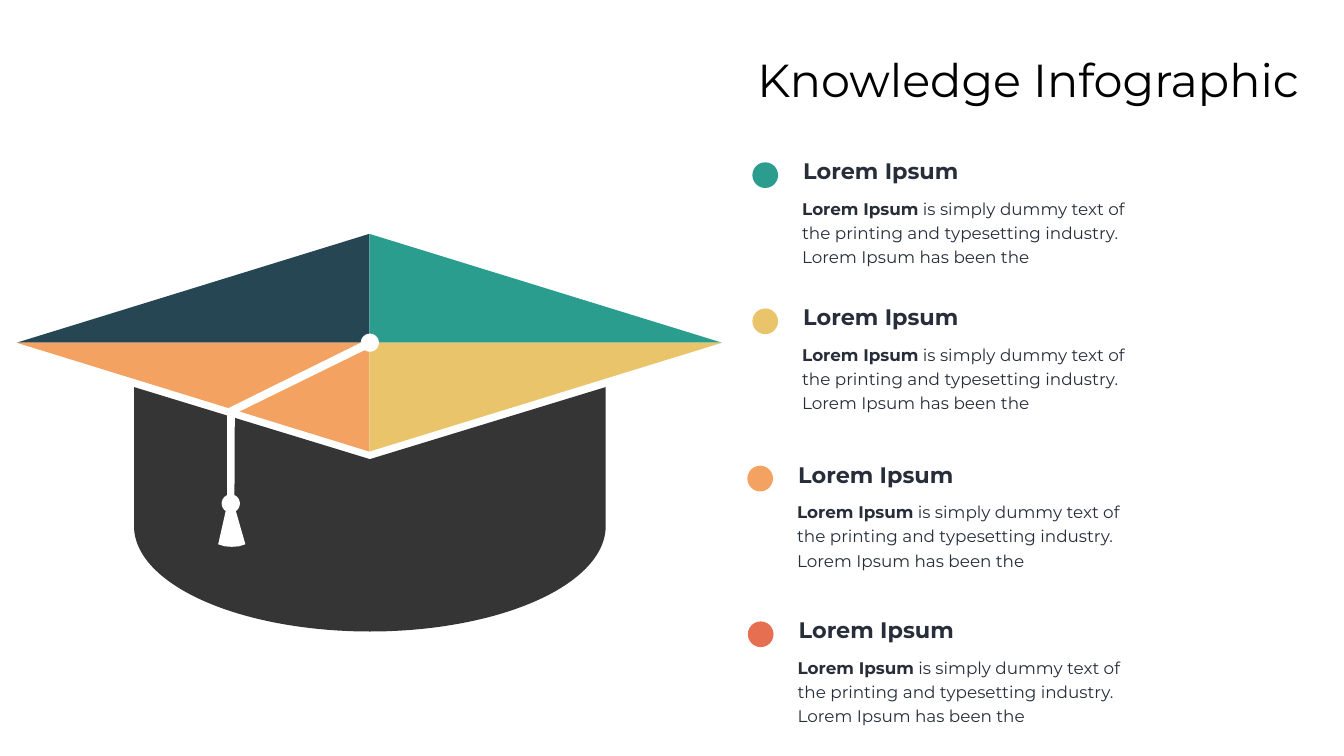
"""Build the Knowledge Infographic slide with a graduation cap and four notes."""
from math import cos, radians, sin
from typing import NamedTuple

from pptx import Presentation
from pptx.dml.color import RGBColor
from pptx.enum.shapes import MSO_SHAPE as Shape
from pptx.enum.text import MSO_ANCHOR as Anchor, MSO_AUTO_SIZE as Fit, PP_ALIGN as Align
from pptx.util import Inches, Pt

FONT = "Montserrat"
COLORS = {
    "navy": "264653", "teal": "2A9D8F", "gold": "E9C46A", "orange": "F4A261",
    "coral": "E76F51", "dark": "353535", "white": "FFFFFF", "ink": "272E3A",
    "black": "000000",
}
HEAD = "Lorem Ipsum"
BODY = " is simply dummy text of the printing and typesetting industry. Lorem Ipsum has been the"
Point = tuple[float, float]


class Note(NamedTuple):
    """A bulleted note, placed by the corner of its dot."""
    color: str
    left: float
    top: float


class Facet(NamedTuple):
    """A triangle of the cap's board, pointing to one side and up or down."""
    color: str
    side: int
    rise: int


NOTES = [
    Note("teal", 14.93, 3.22), Note("gold", 14.93, 6.12),
    Note("orange", 14.83, 9.24), Note("coral", 14.84, 12.33),
]
FACETS = [
    Facet("navy", -1, -1), Facet("orange", -1, 1),
    Facet("teal", 1, -1), Facet("gold", 1, 1),
]
MID_X, MID_Y = 7.33, 6.8
HALF_W, HALF_H = 7, 2.16


def rgb(name: str) -> RGBColor:
    """Look up a colour."""
    return RGBColor.from_string(COLORS[name])


def paint(shape, color: str) -> None:
    """Fill a shape plainly, without line or shadow."""
    shape.fill.solid()
    shape.fill.fore_color.rgb = rgb(color)
    shape.line.fill.background()
    shape.shadow.inherit = False


def arc(mid: Point, radii: Point, start: int, end: int, steps: int = 24) -> list[Point]:
    """Return points along an ellipse, with angles in degrees."""
    turns = [radians(start + (end - start) * i / steps) for i in range(steps + 1)]
    return [(mid[0] + radii[0] * cos(t), mid[1] + radii[1] * sin(t)) for t in turns]


def draw(slide, points: list[Point], color: str) -> None:
    """Draw a closed outline."""
    spots = [(Inches(x), Inches(y)) for x, y in points]
    pen = slide.shapes.build_freeform(*spots[0], scale=1.0)
    pen.add_line_segments(spots[1:], close=True)
    paint(pen.convert_to_shape(), color)


def draw_cap(slide) -> None:
    """Draw the cap, its four facets and the tassel."""
    bowl = arc((7.34, 10.44), (4.68, 2.09), 180, 0, 90)
    draw(slide, [(7.34, 9.11), (2.66, 7.68), *bowl, (12.02, 7.68)], "dark")
    for color, side, rise in FACETS:
        tips = [(MID_X, MID_Y), (MID_X + side * HALF_W, MID_Y), (MID_X, MID_Y + rise * HALF_H)]
        draw(slide, tips, color)
    knot, button, size = (4.58, 9.99), (7.34, MID_Y), (0.18, 0.18)
    tassel = [
        (4.55, 8.09), (4.52, 8.11), (4.51, 8.16), *arc(knot, size, 246, 124),
        (4.33, 10.8), (4.46, 10.84), (4.6, 10.85), (4.74, 10.84), (4.87, 10.8),
        *arc(knot, size, 56, -66), (4.66, 8.21), *arc(button, size, 125, -180),
    ]
    draw(slide, tassel, "white")


def add_text(slide, left: float, top: float, width: float, height: float, size: int):
    """Add a text box and return its paragraph."""
    frame = slide.shapes.add_textbox(*map(Inches, (left, top, width, height))).text_frame
    frame.word_wrap = True
    frame.auto_size = Fit.SHAPE_TO_FIT_TEXT
    para = frame.paragraphs[0]
    para.font.name, para.font.size = FONT, Pt(size)
    para.font.color.rgb = rgb("ink")
    return para


def add_note(slide, note: Note) -> None:
    """Draw a dot with its heading and text."""
    spot = map(Inches, (note.left, note.top, 0.51, 0.51))
    paint(slide.shapes.add_shape(Shape.OVAL, *spot), note.color)
    body = add_text(slide, note.left + 0.89, note.top + 0.59, 7.16, 1.52, 24)
    body.line_spacing = 1.2
    lead = body.add_run()
    lead.text, lead.font.bold = HEAD, True
    body.add_run().text = BODY
    head = add_text(slide, note.left + 0.91, note.top - 0.15, 4.56, 0.64, 32)
    head.font.bold = True
    head.add_run().text = HEAD


def set_title(slide, text: str) -> None:
    """Place and format the title."""
    title = slide.shapes.title
    title.left, title.top, title.width, title.height = map(Inches, (14.93, 0.97, 11.42, 1.21))
    frame = title.text_frame
    frame.text = text
    frame.auto_size = Fit.NONE
    frame.vertical_anchor = Anchor.TOP
    para = frame.paragraphs[0]
    para.alignment = Align.LEFT
    para.font.name, para.font.size = FONT, Pt(66)
    para.font.color.rgb = rgb("black")


def main() -> None:
    """Build and save the deck."""
    deck = Presentation()
    deck.slide_width, deck.slide_height = Inches(26.67), Inches(15)
    slide = deck.slides.add_slide(deck.slide_layouts[5])
    draw_cap(slide)
    for note in NOTES:
        add_note(slide, note)
    set_title(slide, "Knowledge Infographic")
    deck.save("out.pptx")


if __name__ == "__main__":
    main()
